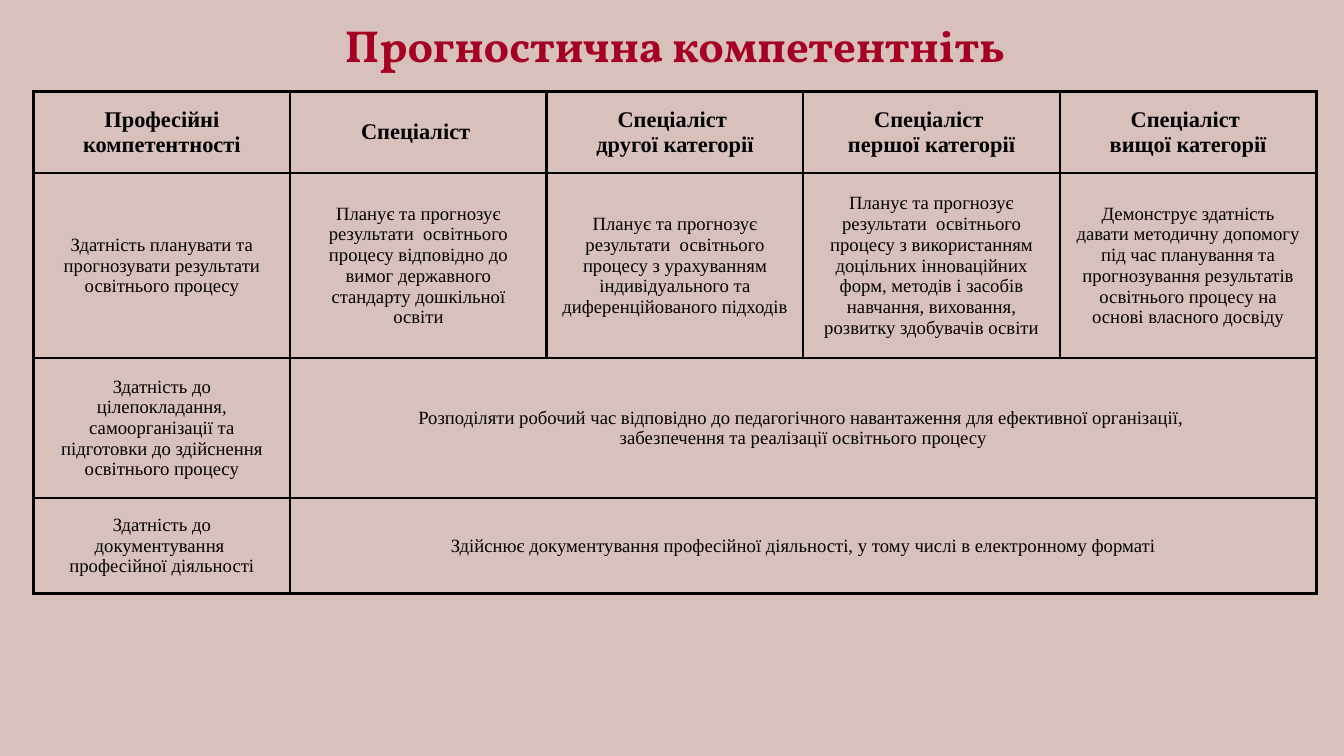
from lxml.etree import SubElement
from pptx import Presentation
from pptx.dml.color import RGBColor
from pptx.enum.text import MSO_ANCHOR, MSO_AUTO_SIZE, PP_ALIGN
from pptx.oxml.ns import qn
from pptx.util import Pt

COLORS = {"background": "D9C1BB", "title": "A50021", "text": "000000", "border": "000000"}
HEADER = [
    "Професійні компетентності",
    "Спеціаліст ",
    "Спеціаліст \nдругої категорії",
    "Спеціаліст \nпершої категорії",
    "Спеціаліст \nвищої категорії",
]
ROWS = [
    [
        "Здатність планувати та прогнозувати результати освітнього процесу",
        "Планує та прогнозує результати  освітнього процесу відповідно до вимог "
        "державного стандарту дошкільної освіти",
        "Планує та прогнозує результати  освітнього процесу з урахуванням "
        "індивідуального та диференційованого підходів",
        "Планує та прогнозує результати  освітнього процесу з використанням доцільних "
        "інноваційних форм, методів і засобів навчання, виховання, розвитку здобувачів освіти",
        "Демонструє здатність давати методичну допомогу під час планування та "
        "прогнозування результатів освітнього процесу на основі власного досвіду",
    ],
    [
        "Здатність до цілепокладання, самоорганізації та підготовки до здійснення "
        "освітнього процесу",
        "Розподіляти робочий час відповідно до педагогічного навантаження для ефективної "
        "організації, \nзабезпечення та реалізації освітнього процесу",
    ],
    [
        "Здатність до документування  професійної діяльності",
        "Здійснює документування професійної діяльності, у тому числі в електронному форматі",
    ],
]
ROW_HEIGHTS = [83, 185, 140.5, 96.4]


def write_text(frame, text, font="Times New Roman", size=20, color="text", bold=False,
               align=PP_ALIGN.CENTER, spacing=None):
    for index, line in enumerate(text.split("\n")):
        para = frame.paragraphs[0] if index == 0 else frame.add_paragraph()
        para.alignment = align
        if spacing:
            para.line_spacing = spacing
        span = para.add_run()
        span.text = line
        span.font.name = font
        span.font.size = Pt(size)
        span.font.bold = bold
        span.font.color.rgb = RGBColor.from_string(COLORS[color])


class SlideBuilder:
    cell_margin = 15
    border_width = 3

    def __init__(self, deck):
        self.page = deck.slides.add_slide(deck.slide_layouts[5])
        fill = self.page.background.fill
        fill.solid()
        fill.fore_color.rgb = RGBColor.from_string(COLORS["background"])

    def title(self, text, left, top, width, height):
        box = self.page.shapes.title
        box.left, box.top, box.width, box.height = map(Pt, (left, top, width, height))
        frame = box.text_frame
        frame.margin_left = frame.margin_right = frame.margin_top = frame.margin_bottom = 0
        frame.vertical_anchor = MSO_ANCHOR.TOP
        frame.word_wrap = True
        frame.auto_size = MSO_AUTO_SIZE.SHAPE_TO_FIT_TEXT
        write_text(frame, text, font="Vollkorn", size=48, color="title", bold=True, spacing=1.1)

    def style_cell(self, cell):
        properties = cell._tc.get_or_add_tcPr()
        for side in ("a:lnL", "a:lnR", "a:lnT", "a:lnB"):
            line = SubElement(properties, qn(side), w=str(Pt(self.border_width)))
            SubElement(SubElement(line, qn("a:solidFill")), qn("a:srgbClr"), val=COLORS["border"])
        cell.fill.background()
        cell.vertical_anchor = MSO_ANCHOR.MIDDLE
        margin = Pt(self.cell_margin)
        cell.margin_left = cell.margin_right = cell.margin_top = cell.margin_bottom = margin

    def table(self, header, rows, heights, left, top, width):
        count = len(header)
        table = self.page.shapes.add_table(
            len(heights), count, Pt(left), Pt(top), Pt(width), Pt(sum(heights))
        ).table
        table.first_row = table.horz_banding = False
        for row, height in zip(table.rows, heights):
            row.height = Pt(height)
        for cell in table.iter_cells():
            self.style_cell(cell)
        for r, texts in enumerate([header, *rows]):
            if len(texts) < count:
                table.cell(r, len(texts) - 1).merge(table.cell(r, count - 1))
            for c, text in enumerate(texts):
                write_text(table.cell(r, c).text_frame, text,
                           size=24 if r == 0 else 20, bold=r == 0)


def main():
    deck = Presentation()
    deck.slide_width, deck.slide_height = Pt(1440), Pt(810)
    builder = SlideBuilder(deck)
    builder.table(HEADER, ROWS, ROW_HEIGHTS, left=36, top=98, width=1374.5)
    builder.title("Прогностична компетентніть", left=306.7, top=13, width=833, height=64)
    deck.save("out.pptx")


if __name__ == "__main__":
    main()
